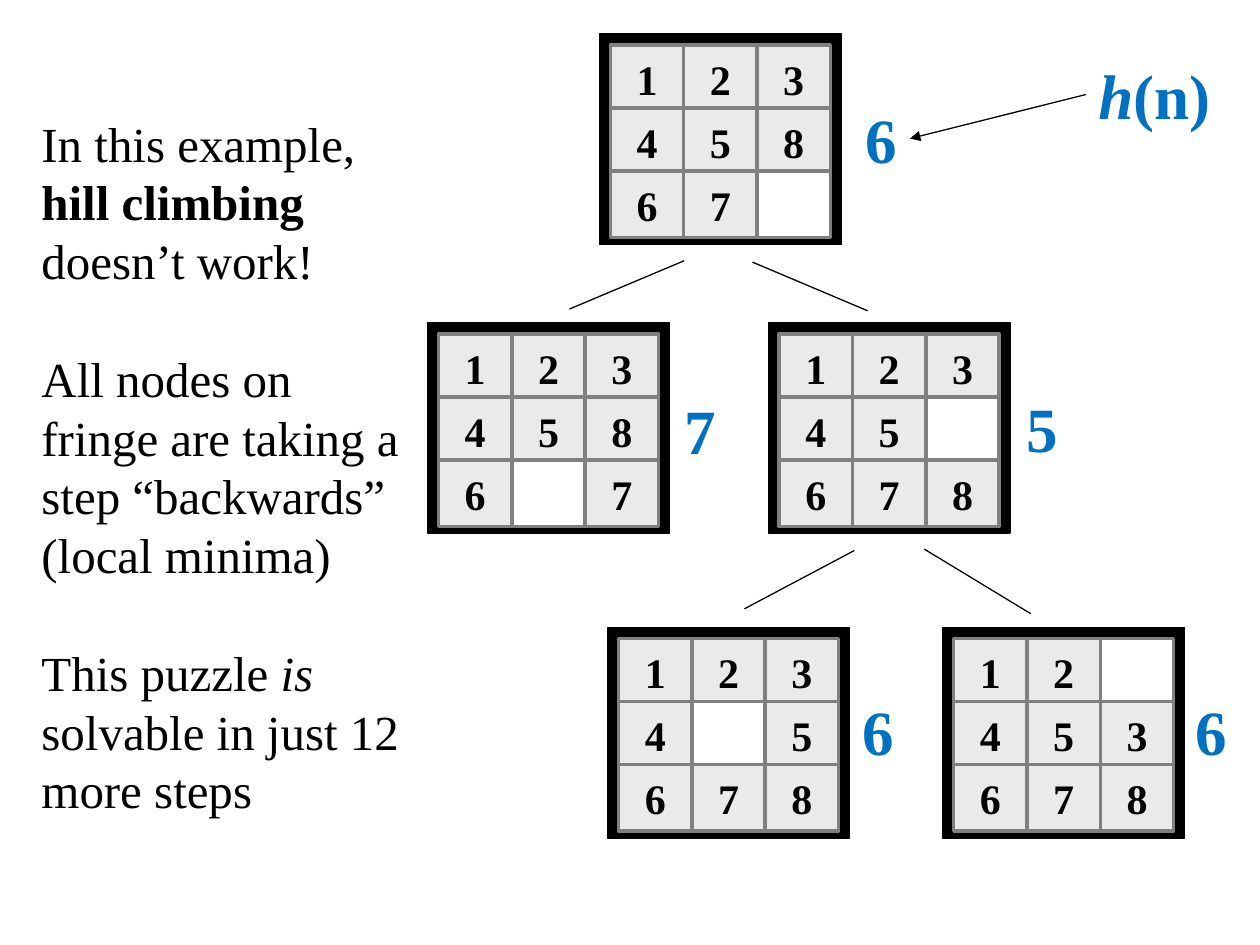
"""Build a slide showing hill climbing stuck on the eight puzzle."""
from lxml.etree import SubElement
from pptx import Presentation
from pptx.dml.color import RGBColor
from pptx.enum.shapes import MSO_CONNECTOR as Link, MSO_SHAPE as Shape
from pptx.enum.text import MSO_ANCHOR as Anchor, PP_ALIGN as Align
from pptx.oxml.ns import qn
from pptx.util import Pt

FONT, BLACK, GRAY, TILE, WHITE, BLUE = (
    "Times New Roman", "000000", "808080", "EAEAEA", "FFFFFF", "0070C0")

BOARDS = [
    ("12345867 ", (342.5, 19.5), "6", (487.4, 54)),
    ("12345 678", (439, 184.5), "5", (579.6, 219)),
    ("1234586 7", (244.3, 184.5), "7", (383.8, 220.4)),
    ("1234 5678", (347.2, 358.7), "6", (486, 392.4)),
    ("12 453678", (538.7, 358.7), "6", (676.2, 392.4)),
]
EDGES = [
    (391, 149, 325.4, 176.6), (430, 149.8, 495.8, 177.6),
    (488.2, 314.6, 425.4, 347.9), (528.2, 313.8, 589, 350.7),
]
ARROW = (620.6, 54, 520, 79.2)
NOTES = [
    (0, [("In this example, ", ""), ("hill climbing ", "b"), ("doesn’t work!", "")]),
    (1, [("All nodes on fringe are taking a step “backwards”", "")]),
    (0, [("(local minima)", "")]),
    (1, [("This puzzle ", ""), ("is", "i"), (" solvable in just 12 more steps", "")]),
]
WIDE, HIGH, EDGE = 138.2, 120.2, 6.3
STEP_X, STEP_Y, TILE_W, TILE_H = 41.9, 36, 41.9, 38
LEAD = 33.6


def tint(code):
    return RGBColor.from_string(code)


def style(par, size, color, bold=None):
    font = par.font
    font.name, font.size, font.bold = FONT, Pt(size), bold
    font.color.rgb = tint(color)


def fill_runs(par, runs):
    for text, mark in runs:
        run = par.add_run()
        run.text = text
        if mark == "b":
            run.font.bold = True
        elif mark == "i":
            run.font.italic = True


def add_rect(group, box, fill, line, width):
    rect = group.shapes.add_shape(Shape.RECTANGLE, *map(Pt, box))
    rect.shadow.inherit = False
    rect.fill.solid()
    rect.fill.fore_color.rgb = tint(fill)
    rect.line.color.rgb = tint(line)
    rect.line.width = Pt(width)
    return rect


def add_board(slide, tiles, left, top):
    group = slide.shapes.add_group_shape()
    add_rect(group, (left, top, WIDE, HIGH), BLACK, BLACK, 0.75)
    for i, digit in enumerate(tiles):
        row, col = divmod(i, 3)
        box = (left + EDGE + col * STEP_X, top + EDGE + row * STEP_Y, TILE_W, TILE_H)
        blank = digit == " "
        tile = add_rect(group, box, WHITE if blank else TILE, GRAY, 2)
        if not blank:
            frame = tile.text_frame
            frame.vertical_anchor = Anchor.MIDDLE
            par = frame.paragraphs[0]
            par.text, par.alignment = digit, Align.CENTER
            style(par, 24, BLACK, True)


def add_label(slide, runs, box):
    frame = slide.shapes.add_textbox(*map(Pt, box)).text_frame
    frame.word_wrap = False
    par = frame.paragraphs[0]
    fill_runs(par, runs)
    style(par, 36, BLUE, True)


def add_line(slide, ends, arrow=False):
    line = slide.shapes.add_connector(Link.STRAIGHT, *map(Pt, ends))
    line.line.color.rgb = tint(BLACK)
    line.line.width = Pt(0.75)
    if arrow:
        SubElement(line.line._get_or_add_ln(), qn("a:tailEnd"), type="triangle")
    SubElement(line._element.spPr, qn("a:effectLst"))


def add_notes(slide):
    frame = slide.shapes.add_textbox(Pt(16.6), Pt(61.2), Pt(229), Pt(414.7)).text_frame
    frame.word_wrap = True
    for i, (gap, runs) in enumerate(NOTES):
        par = frame.add_paragraph() if i else frame.paragraphs[0]
        fill_runs(par, runs)
        style(par, 28, BLACK)
        par.line_spacing, par.space_before = Pt(LEAD), Pt(gap * LEAD)


def main():
    deck = Presentation()
    deck.slide_width, deck.slide_height = Pt(720), Pt(540)
    slide = deck.slides.add_slide(deck.slide_layouts[6])
    for tiles, spot, _, _ in BOARDS:
        add_board(slide, tiles, *spot)
    for ends in EDGES:
        add_line(slide, ends)
    for _, _, score, spot in BOARDS:
        add_label(slide, [(score, "")], (*spot, 32.4, 50.4))
    add_notes(slide)
    add_label(slide, [("h", "i"), ("(n)", "")], (620.6, 28.8, 79.2, 51))
    add_line(slide, ARROW, arrow=True)
    deck.save("out.pptx")


if __name__ == "__main__":
    main()
